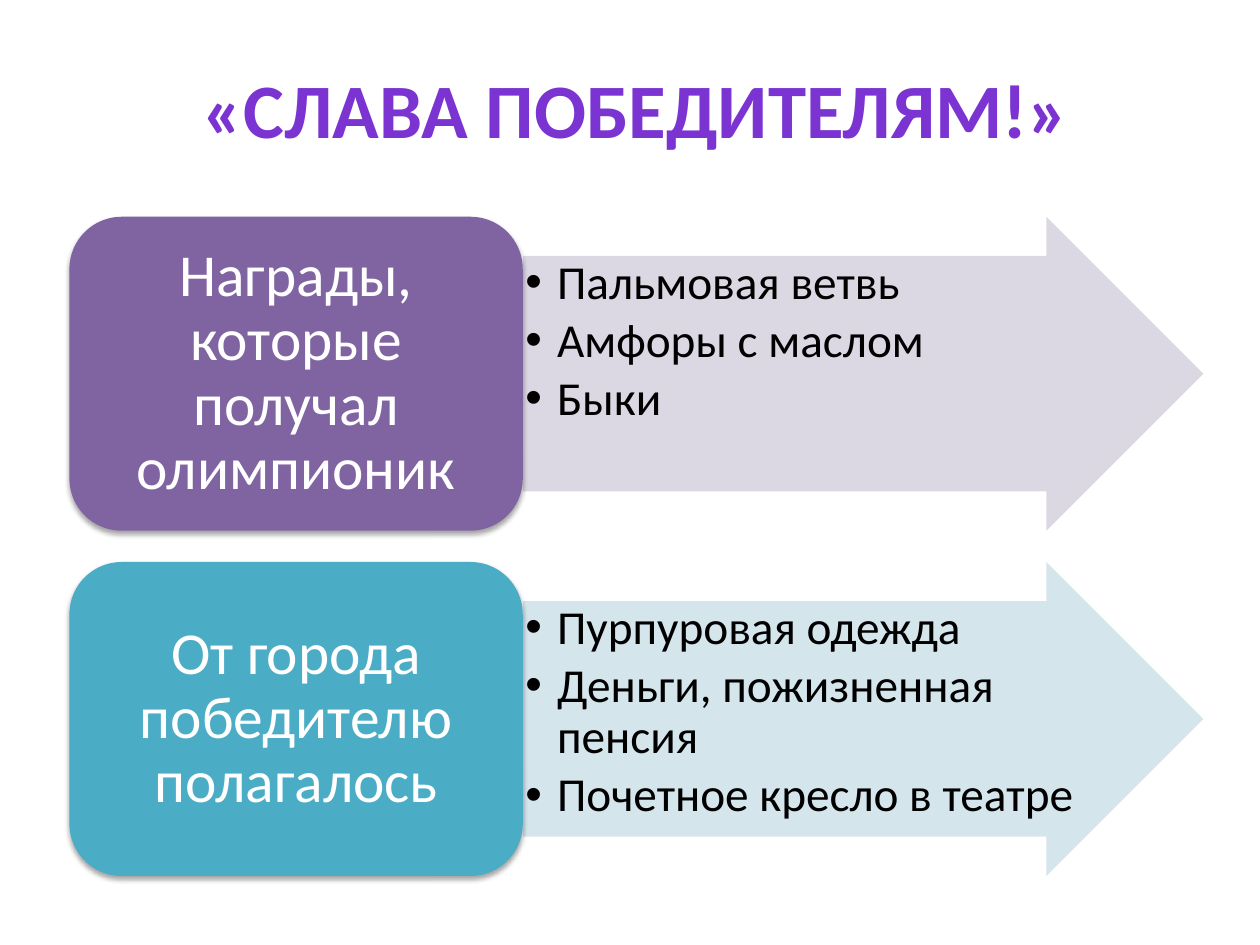
from dataclasses import dataclass

import pptx
import pptx.dml.color
import pptx.enum.shapes
import pptx.enum.text
import pptx.oxml
import pptx.oxml.ns
import pptx.util
from lxml import etree
from pptx.util import Cm, Pt

FONT = "Calibri"
LEFT, TOP = 1.4, 4.37
LABEL_WIDTH, ARROW_WIDTH = 9.14, 13.72
ROW_HEIGHT, ROW_PITCH = 6.33, 6.96
INDENT = 0.64


@dataclass
class Row:
    label: str
    items: tuple[str, ...]
    label_color: str
    arrow_color: str


ROWS = (
    Row("Награды, которые получал олимпионик",
        ("Пальмовая ветвь", "Амфоры с маслом", "Быки"),
        "8064A2", "D8D3E0"),
    Row("От города победителю полагалось",
        ("Пурпуровая одежда", "Деньги, пожизненная пенсия", "Почетное кресло в театре"),
        "4BACC6", "D0E3EA"),
)


def color(value: str) -> pptx.dml.color.RGBColor:
    return pptx.dml.color.RGBColor.from_string(value)


def add_child(parent, tag: str, **attributes: str):
    child = etree.SubElement(parent, pptx.oxml.ns.qn(tag))
    for name, value in attributes.items():
        child.set(name, value)
    return child


def add_run(paragraph, text: str, size: float, text_color: str, bold: bool = False) -> None:
    run = paragraph.add_run()
    run.text = text
    run.font.name = FONT
    run.font.size = Pt(size)
    run.font.bold = bold
    run.font.color.rgb = color(text_color)


def set_frame(frame, anchor, side: float, vertical: float) -> None:
    frame.word_wrap = True
    frame.vertical_anchor = anchor
    frame.margin_left = frame.margin_right = Cm(side)
    frame.margin_top = frame.margin_bottom = Cm(vertical)


def add_block(slide, kind, left: float, top: float, width: float, fill: str):
    shape = slide.shapes.add_shape(kind, Cm(left), Cm(top), Cm(width), Cm(ROW_HEIGHT))
    shape.fill.solid()
    shape.fill.fore_color.rgb = color(fill)
    shape.line.fill.background()
    shape.shadow.inherit = False
    return shape


def add_arrow(slide, row: Row, top: float) -> None:
    shape = add_block(slide, pptx.enum.shapes.MSO_SHAPE.RIGHT_ARROW,
                      LEFT + LABEL_WIDTH, top, ARROW_WIDTH, row.arrow_color)
    shape.adjustments[0] = 0.75
    shape.adjustments[1] = 0.5
    fill_color = shape.element.spPr.find(
        pptx.oxml.ns.qn("a:solidFill") + "/" + pptx.oxml.ns.qn("a:srgbClr"))
    add_child(fill_color, "a:alpha", val="90000")
    frame = shape.text_frame
    set_frame(frame, pptx.enum.text.MSO_ANCHOR.TOP, 0.05, 0.05)
    for index, item in enumerate(row.items):
        paragraph = frame.add_paragraph() if index else frame.paragraphs[0]
        paragraph.alignment = pptx.enum.text.PP_ALIGN.LEFT
        paragraph.line_spacing = 0.9
        paragraph.space_after = Pt(4)
        properties = paragraph._p.get_or_add_pPr()
        properties.set("marL", str(Cm(INDENT)))
        properties.set("indent", str(-Cm(INDENT)))
        add_child(properties, "a:buFont", typeface="Arial")
        add_child(properties, "a:buChar", char="•")
        add_run(paragraph, item, 27, "000000")


def add_label(slide, row: Row, top: float) -> None:
    shape = add_block(slide, pptx.enum.shapes.MSO_SHAPE.ROUNDED_RECTANGLE,
                      LEFT, top, LABEL_WIDTH, row.label_color)
    effects = shape.element.spPr.find(pptx.oxml.ns.qn("a:effectLst"))
    shadow = add_child(effects, "a:outerShdw", blurRad=str(Pt(3.1)), dist=str(Pt(1.8)),
                       dir="5400000", rotWithShape="0")
    shadow_color = add_child(shadow, "a:srgbClr", val="000000")
    add_child(shadow_color, "a:alpha", val="35000")
    set_frame(shape.text_frame, pptx.enum.text.MSO_ANCHOR.MIDDLE, 0.36, 0.18)
    paragraph = shape.text_frame.paragraphs[0]
    paragraph.alignment = pptx.enum.text.PP_ALIGN.CENTER
    paragraph.line_spacing = 0.9
    add_run(paragraph, row.label, 34, "FFFFFF")


def add_title(slide, text: str) -> None:
    box = slide.shapes.add_textbox(Cm(LEFT), Cm(0.58), Cm(LABEL_WIDTH + ARROW_WIDTH), Cm(3.18))
    set_frame(box.text_frame, pptx.enum.text.MSO_ANCHOR.MIDDLE, 0.25, 0.13)
    paragraph = box.text_frame.paragraphs[0]
    paragraph.alignment = pptx.enum.text.PP_ALIGN.CENTER
    add_run(paragraph, text, 44, "7B34D2", bold=True)


def main() -> None:
    presentation = pptx.Presentation()
    presentation.slide_width, presentation.slide_height = Cm(25.4), Cm(19.05)
    slide = presentation.slides.add_slide(presentation.slide_layouts[6])

    # Title
    add_title(slide, "«СЛАВА ПОБЕДИТЕЛЯМ!»")

    # One label with its arrow per row
    for index, row in enumerate(ROWS):
        top = TOP + index * ROW_PITCH
        add_arrow(slide, row, top)
        add_label(slide, row, top)

    presentation.save("out.pptx")


if __name__ == "__main__":
    main()
